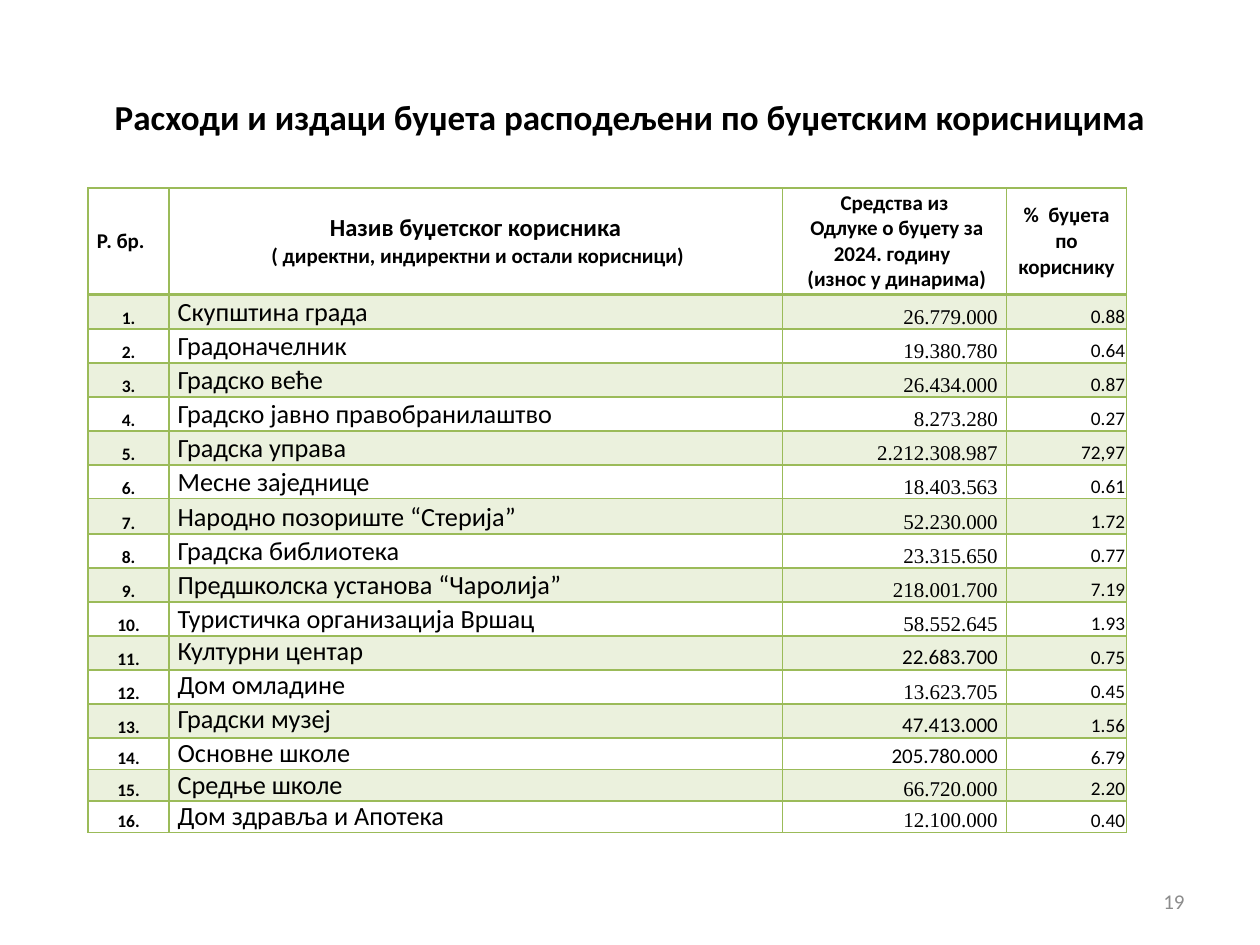
import pptx
import pptx.dml.color
import pptx.enum.text
import pptx.oxml
import pptx.oxml.ns
import pptx.util

COLORS = {"text": "000000", "green": "9BBB59", "number": "8C8C8C"}
ALIGN = pptx.enum.text.PP_ALIGN
ANCHOR = pptx.enum.text.MSO_ANCHOR
SERIF = "Times New Roman"

HEADERS = [
    [("Р. бр.", 12)],
    [("Назив буџетског корисника", 14),
     (" ( директни, индиректни и остали корисници)", 12)],
    [("Средства из", 12), (" Одлуке о буџету за 2024. годину ", 12),
     (" (износ у динарима)", 12)],
    [("%  буџета по кориснику", 12)],
]
BENEFICIARIES = [
    ("Скупштина града", "26.779.000", "0.88"),
    ("Градоначелник", "19.380.780", "0.64"),
    ("Градско веће", "26.434.000", "0.87"),
    ("Градско јавно правобранилаштво", "8.273.280", "0.27"),
    ("Градска управа", "2.212.308.987", "72,97"),
    ("Месне заједнице", "18.403.563", "0.61"),
    ("Народно позориште “Стерија”", "52.230.000", "1.72"),
    ("Градска библиотека", "23.315.650", "0.77"),
    ("Предшколска установа “Чаролија”", "218.001.700", "7.19"),
    ("Туристичка организација Вршац", "58.552.645", "1.93"),
    ("Културни центар", "22.683.700", "0.75"),
    ("Дом омладине ", "13.623.705", "0.45"),
    ("Градски музеј", "47.413.000", "1.56"),
    ("Основне школе", "205.780.000", "6.79"),
    ("Средње школе", "66.720.000", "2.20"),
    ("Дом здравља и Апотека", "12.100.000", "0.40"),
]
SANS_AMOUNTS = {11, 13, 14}
JUSTIFIED_NAMES = range(11, 16)
COLUMN_WIDTHS = [6.4, 48.7, 17.8, 9.5]
ROW_HEIGHTS = [8.5] + [2.7] * 6 + [2.8] + [2.7] * 6 + [2.5] * 3


def write_text(frame, text, size=12, font="Calibri", color="text",
               bold=False, align=ALIGN.LEFT, first=True):
    paragraph = frame.paragraphs[0] if first else frame.add_paragraph()
    paragraph.alignment = align
    run = paragraph.add_run()
    run.text = text
    run.font.size = pptx.util.Pt(size)
    run.font.name = font
    run.font.bold = bold
    run.font.color.rgb = pptx.dml.color.RGBColor.from_string(COLORS[color])


class SlideBuilder:
    GRID_COLUMNS, GRID_ROWS = 100, 75

    def __init__(self, presentation):
        self.column = presentation.slide_width / self.GRID_COLUMNS
        self.row = presentation.slide_height / self.GRID_ROWS
        self.slide = presentation.slides.add_slide(presentation.slide_layouts[6])

    def place(self, left, top, width, height):
        return (round(left * self.column), round(top * self.row),
                round(width * self.column), round(height * self.row))

    def text_box(self, area, text, **style):
        frame = self.slide.shapes.add_textbox(*self.place(*area)).text_frame
        frame.word_wrap = True
        frame.vertical_anchor = ANCHOR.MIDDLE
        write_text(frame, text, **style)

    def table(self, left, top, widths, heights):
        area = self.place(left, top, sum(widths), sum(heights))
        table = self.slide.shapes.add_table(len(heights), len(widths), *area).table
        table.first_row = False
        table.horz_banding = False
        for column, width in zip(table.columns, widths):
            column.width = round(width * self.column)
        for row, height in zip(table.rows, heights):
            row.height = round(height * self.row)
        return table

    def cell(self, cell, lines, anchor=ANCHOR.BOTTOM, side=0.07, top=0,
             shaded=False, top_line=1, bottom_line=1, **style):
        cell.vertical_anchor = anchor
        cell.margin_left = cell.margin_right = pptx.util.Inches(side)
        cell.margin_top = pptx.util.Inches(top)
        cell.margin_bottom = 0
        for index, (text, size) in enumerate(lines):
            write_text(cell.text_frame, text, size=size, first=index == 0, **style)
        self.fill(cell, shaded)
        self.borders(cell, {"L": 1, "R": 1, "T": top_line, "B": bottom_line})

    def fill(self, cell, shaded):
        if not shaded:
            cell.fill.background()
            return
        cell.fill.solid()
        cell.fill.fore_color.rgb = pptx.dml.color.RGBColor.from_string(COLORS["green"])
        color = cell._tc.tcPr.find(".//" + pptx.oxml.ns.qn("a:srgbClr"))
        color.append(pptx.oxml.parse_xml(
            f'<a:alpha {pptx.oxml.ns.nsdecls("a")} val="20000"/>'))

    def borders(self, cell, widths):
        for index, (edge, width) in enumerate(widths.items()):
            cell._tc.tcPr.insert(index, pptx.oxml.parse_xml(
                f'<a:ln{edge} {pptx.oxml.ns.nsdecls("a")} w="{pptx.util.Pt(width)}">'
                f'<a:solidFill><a:srgbClr val="{COLORS["green"]}"/></a:solidFill>'
                f'</a:ln{edge}>'))


def add_budget_table(builder):
    table = builder.table(7, 14.9, COLUMN_WIDTHS, ROW_HEIGHTS)
    for column, lines in enumerate(HEADERS):
        builder.cell(table.cell(0, column), lines, anchor=ANCHOR.MIDDLE, bold=True,
                     align=ALIGN.CENTER if column else ALIGN.LEFT, bottom_line=2)
    for number, (name, amount, share) in enumerate(BENEFICIARIES, start=1):
        justified = number in JUSTIFIED_NAMES
        formats = [
            (f"{number}.", 10, dict(bold=True, align=ALIGN.CENTER)),
            (name, 15, dict(anchor=ANCHOR.TOP if justified else ANCHOR.BOTTOM,
                            align=ALIGN.JUSTIFY if justified else ALIGN.LEFT)),
            (amount, 12, dict(font="Calibri" if number in SANS_AMOUNTS else SERIF,
                              align=ALIGN.RIGHT)),
            (share, 11, dict(align=ALIGN.RIGHT, side=0.01, top=0.01)),
        ]
        for column, (text, size, style) in enumerate(formats):
            builder.cell(table.cell(number, column), [(text, size)],
                         shaded=number % 2 == 1,
                         top_line=2 if number == 1 else 1, **style)


def main():
    presentation = pptx.Presentation()
    presentation.slide_width = pptx.util.Inches(10)
    presentation.slide_height = pptx.util.Inches(7.5)
    builder = SlideBuilder(presentation)
    builder.text_box((5, 3, 90, 12.5),
                     "Расходи и издаци буџета расподељени по буџетским корисницима",
                     size=20, bold=True, align=ALIGN.CENTER)
    add_budget_table(builder)
    builder.text_box((71.7, 69.5, 23.3, 4), "19", color="number", align=ALIGN.RIGHT)
    presentation.save("out.pptx")


if __name__ == "__main__":
    main()
